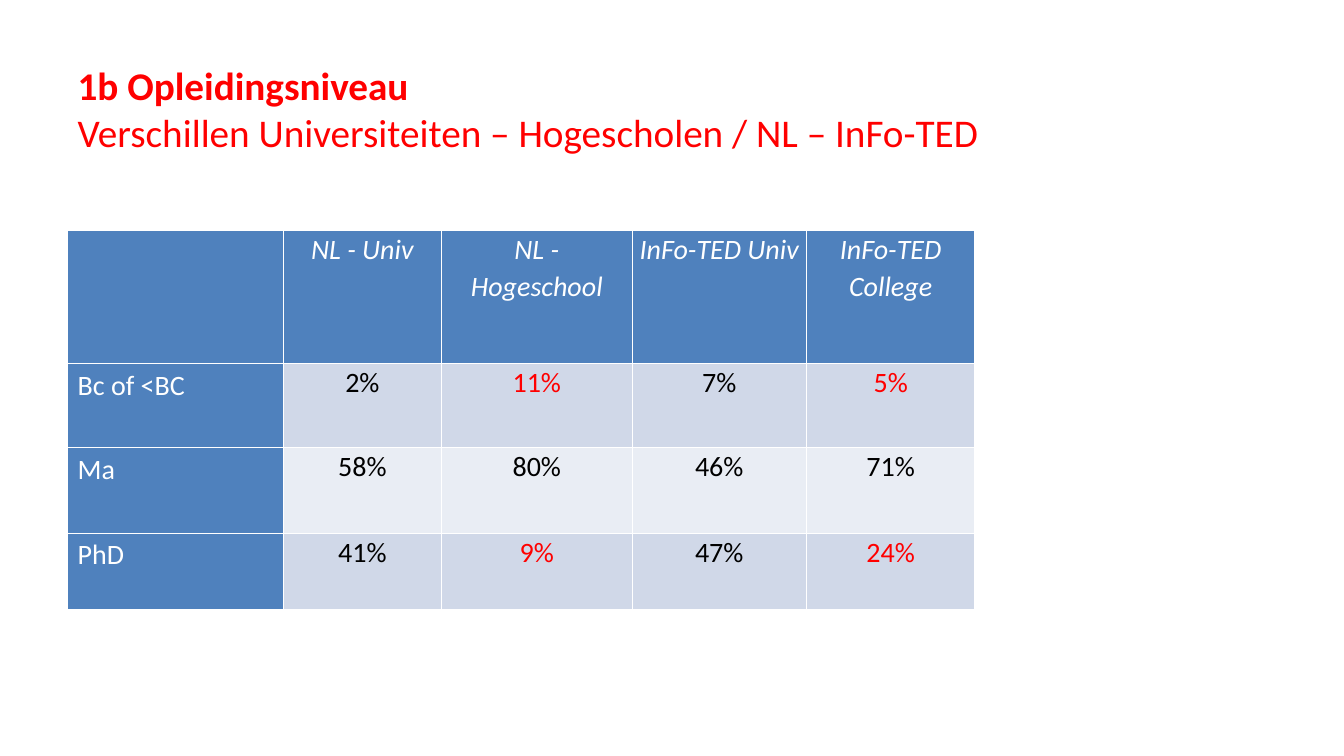
from lxml import etree
from pptx import Presentation
from pptx.dml.color import RGBColor
from pptx.enum.text import MSO_ANCHOR as Anchor, MSO_AUTO_SIZE as AutoSize, PP_ALIGN as Align
from pptx.oxml.ns import qn
from pptx.util import Inches, Pt

COLORS = {
    "blue": "4F81BD",
    "band_dark": "D0D8E8",
    "band_light": "E9EDF4",
    "red": "FF0000",
    "white": "FFFFFF",
    "black": "000000",
}
FONT = "Calibri"

HEADINGS = ["", "NL - Univ", "NL - Hogeschool", "InFo-TED Univ", "InFo-TED College"]
LEVELS = [
    ["Bc of <BC", "2%", "11%", "7%", "5%"],
    ["Ma", "58%", "80%", "46%", "71%"],
    ["PhD", "41%", "9%", "47%", "24%"],
]
HIGHLIGHTS = {"11%", "5%", "9%", "24%"}
COLUMN_WIDTHS = [2.14, 1.57, 1.89, 1.73, 1.67]
ROW_HEIGHTS = [1.32, 0.83, 0.85, 0.76]


def write(paragraph, text, size=20, color="black", bold=False, italic=False,
          align=Align.LEFT, spacing=1.0):
    """Write one formatted line into a paragraph."""
    paragraph.alignment = align
    paragraph.line_spacing = spacing
    run = paragraph.add_run()
    run.text = text
    run.font.name = FONT
    run.font.size = Pt(size)
    run.font.bold = bold
    run.font.italic = italic
    run.font.color.rgb = RGBColor.from_string(COLORS[color])


def fill_cell(cell, color):
    cell.fill.solid()
    cell.fill.fore_color.rgb = RGBColor.from_string(COLORS[color])


def border_cell(cell, color="white", width=1):
    """Draw all four borders; they must precede the fill in the XML."""
    properties = cell._tc.get_or_add_tcPr()
    for position, side in enumerate(["a:lnL", "a:lnR", "a:lnT", "a:lnB"]):
        line = etree.Element(qn(side), w=str(Pt(width)))
        solid = etree.SubElement(line, qn("a:solidFill"))
        etree.SubElement(solid, qn("a:srgbClr"), val=COLORS[color])
        properties.insert(position, line)


def add_heading(slide, left, top, width, height):
    heading = slide.shapes.title
    heading.left, heading.top = Inches(left), Inches(top)
    heading.width, heading.height = Inches(width), Inches(height)
    frame = heading.text_frame
    frame.word_wrap = True
    frame.auto_size = AutoSize.NONE
    frame.vertical_anchor = Anchor.MIDDLE
    frame.margin_bottom = Inches(0.45)
    write(frame.paragraphs[0], "1b Opleidingsniveau", size=28, color="red", bold=True)
    write(frame.add_paragraph(), "Verschillen Universiteiten – Hogescholen / NL – InFo-TED",
          size=28, color="red")


def add_levels_table(slide, left, top):
    rows = [HEADINGS] + LEVELS
    table = slide.shapes.add_table(
        len(rows), len(HEADINGS), Inches(left), Inches(top),
        Inches(sum(COLUMN_WIDTHS)), Inches(sum(ROW_HEIGHTS))).table
    for column, width in zip(table.columns, COLUMN_WIDTHS):
        column.width = Inches(width)

    for r, (values, height) in enumerate(zip(rows, ROW_HEIGHTS)):
        table.rows[r].height = Inches(height)
        for c, value in enumerate(values):
            cell = table.cell(r, c)
            is_label = r == 0 or c == 0
            band = "band_dark" if r % 2 else "band_light"
            fill_cell(cell, "blue" if is_label else band)
            border_cell(cell)
            # Headings and percentages are centred, row labels stay left
            if c > 0:
                cell.margin_left = cell.margin_right = Inches(0.07)
                cell.margin_top = cell.margin_bottom = 0
            if value:
                number_color = "red" if value in HIGHLIGHTS else "black"
                write(cell.text_frame.paragraphs[0], value,
                      color="white" if is_label else number_color,
                      italic=r == 0,
                      align=Align.CENTER if c else Align.LEFT,
                      spacing=1.07 if c else 1.0)


def main():
    deck = Presentation()
    deck.slide_width, deck.slide_height = Inches(13.33), Inches(7.5)
    slide = deck.slides.add_slide(deck.slide_layouts[5])
    add_heading(slide, 0.67, 0.3, 12, 1.95)
    add_levels_table(slide, 0.67, 2.29)
    deck.save("out.pptx")


if __name__ == "__main__":
    main()
